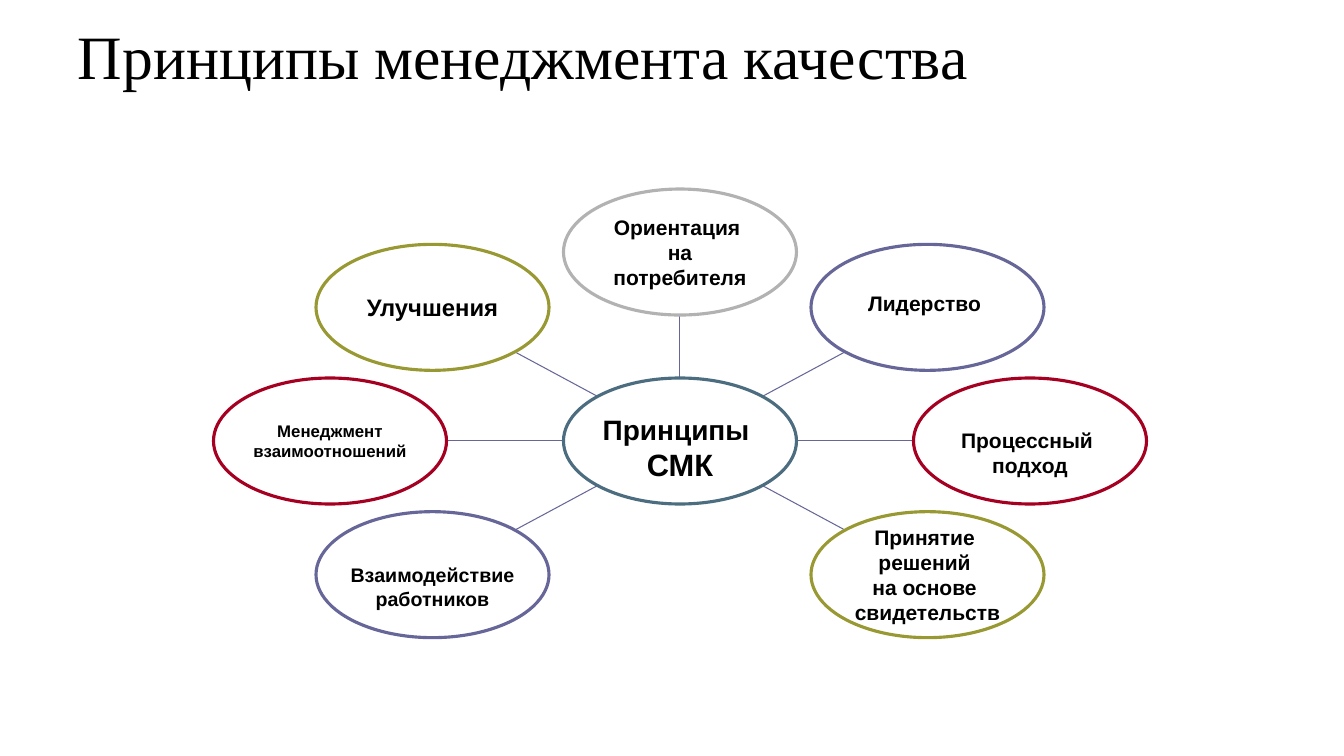
from math import cos, sin, radians
from lxml.etree import SubElement
from pptx import Presentation
from pptx.dml.color import RGBColor
from pptx.enum.shapes import MSO_SHAPE as Shape, MSO_CONNECTOR as Link
from pptx.enum.text import MSO_ANCHOR as Anchor, MSO_AUTO_SIZE as Fit, PP_ALIGN as Align
from pptx.oxml.ns import qn
from pptx.util import Emu, Pt

TITLE = "Принципы менеджмента качества"
# lines, sizes in points, outline, top and bottom inset in px
HUB = (["Принципы ", "СМК"], [20, 22], "4C6D80", 13, 0)
# clockwise from nine o'clock's lower neighbour, one every 45 degrees
NODES = [
    (["Взаимодействие работников"], [14], "666699", 24, 0),
    (["Менеджмент взаимоотношений"], [12], "A50021", 0, 0),
    (["Улучшения"], [17], "999933", 0, 0),
    (["Ориентация ", "на", "потребителя"], [15] * 3, "B2B2B2", 0, 0),
    (["Лидерство "], [15], "666699", 24, 32),
    (["Процессный ", "подход"], [15] * 2, "A50021", 24, 0),
    (["Принятие ", "решений ", "на основе ", "свидетельств"], [15] * 4, "999933", 0, 0),
]
START, STEP = 135, 45
CX, CY = 680, 441
RING = (350, 189)
OVAL = (233, 126)


def px(n):
    return Emu(round(n * 914400 / 100.8))


def color(code):
    return RGBColor.from_string(code)


def write(frame, lines, sizes, font="Arial", bold=True, align=Align.CENTER,
          anchor=Anchor.MIDDLE, inset=(0, 0, 0, 0)):
    """Fill a text frame, one paragraph a line; inset is left, top, right, bottom."""
    frame.word_wrap = True
    frame.auto_size = Fit.NONE
    frame.vertical_anchor = anchor
    (frame.margin_left, frame.margin_top,
     frame.margin_right, frame.margin_bottom) = map(px, inset)
    for i, (line, size) in enumerate(zip(lines, sizes)):
        par = frame.paragraphs[0] if i == 0 else frame.add_paragraph()
        par.alignment = align
        run = par.add_run()
        run.text = line
        run.font.name, run.font.size, run.font.bold = font, Pt(size), bold
        run.font.color.rgb = color("000000")


def oval(shapes, x, y, node):
    """Draw a node centred on x, y."""
    lines, sizes, edge, top, bottom = node
    w, h = OVAL
    shape = shapes.add_shape(Shape.OVAL, px(x - w / 2), px(y - h / 2), px(w), px(h))
    shape.shadow.inherit = False
    shape.fill.background()
    shape.line.color.rgb = color(edge)
    shape.line.width = Pt(2.25)
    write(shape.text_frame, lines, sizes, inset=(0, top, 0, bottom))


def spoke(shapes, dx, dy):
    """Join the hub's rim to the rim of the node that lies along dx, dy."""
    (rx, ry), (w, h) = RING, OVAL
    near = CX + dx * w / 2, CY + dy * h / 2
    far = CX + dx * (rx - w / 2), CY + dy * (ry - h / 2)
    line = shapes.add_connector(Link.STRAIGHT, *map(px, near + far))
    line.line.color.rgb = color("666699")
    line.line.width = Pt(0.75)
    SubElement(line._element.spPr, qn("a:effectLst"))


def main():
    deck = Presentation()
    deck.slide_width, deck.slide_height = px(1344), px(756)
    shapes = deck.slides.add_slide(deck.slide_layouts[5]).shapes

    title = shapes.title
    title.left, title.top, title.width, title.height = map(px, (68, 13, 1109, 143))
    write(title.text_frame, [TITLE], [44], font="Times New Roman", bold=False,
          align=Align.LEFT, anchor=Anchor.TOP, inset=(10, 5, 10, 5))

    for i, node in enumerate(NODES):
        turn = radians(START + i * STEP)
        dx, dy = cos(turn), sin(turn)
        spoke(shapes, dx, dy)
        oval(shapes, CX + dx * RING[0], CY + dy * RING[1], node)
    oval(shapes, CX, CY, HUB)
    deck.save("out.pptx")


if __name__ == "__main__":
    main()
